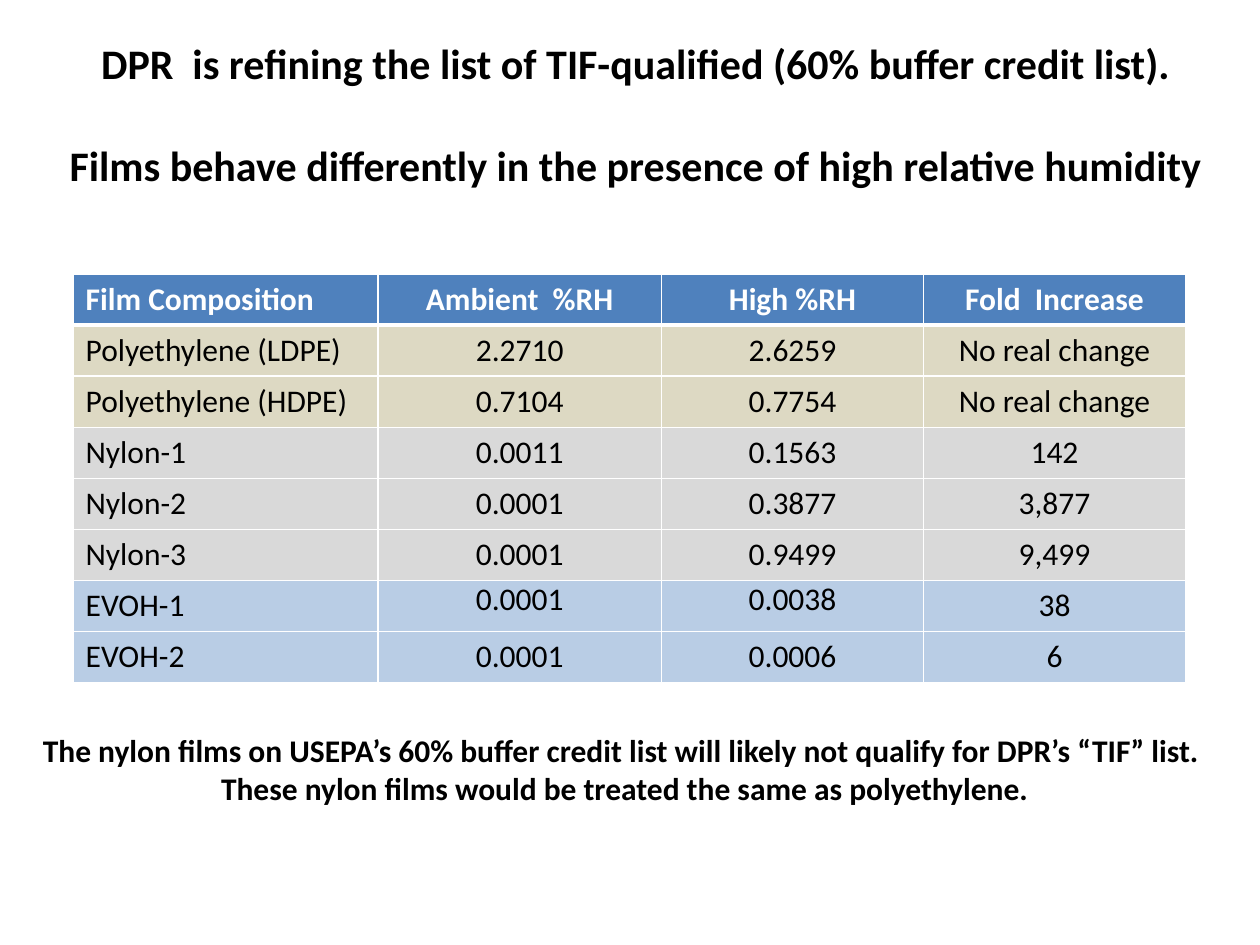
from typing import NamedTuple

from lxml import etree
from pptx import Presentation
from pptx import util as u
from pptx.dml.color import RGBColor
from pptx.enum import text
from pptx.oxml.ns import qn

WIDE, HIGH = u.Inches(10), u.Inches(7.5)
FONT = "Calibri"
BLACK = RGBColor(0, 0, 0)
WHITE = RGBColor(255, 255, 255)
BLUE = RGBColor(0x4F, 0x81, 0xBD)
TAN = RGBColor(0xDD, 0xD9, 0xC3)
GREY = RGBColor(0xD9, 0xD9, 0xD9)
PALE = RGBColor(0xB9, 0xCD, 0xE5)
LEFT, CENTER = text.PP_ALIGN.LEFT, text.PP_ALIGN.CENTER


class Box(NamedTuple):
    """Left, top, width and height as shares of the slide."""
    x: float
    y: float
    w: float
    h: float

    def emu(self) -> tuple:
        return (int(self.x * WIDE), int(self.y * HIGH),
                int(self.w * WIDE), int(self.h * HIGH))


class Film(NamedTuple):
    cells: tuple
    fill: RGBColor
    flush: tuple = ()  # columns whose cells have no top and bottom margin


TITLE = Box(0.042, 0.033, 0.925, 0.175)
GRID = Box(0.058, 0.29, 0.883, 0.432)
NOTE = Box(0.017, 0.767, 0.958, 0.094)
COLS = (2.42, 2.25, 2.08, 2.08)
HEADS = (
    "DPR  is refining the list of TIF-qualified (60% buffer credit list).",
    "Films behave differently in the presence of high relative humidity",
)
CLAIM = (
    "The nylon films on USEPA’s 60% buffer credit list will likely not "
    "qualify for DPR’s “TIF” list.  ",
    "These nylon films would be treated the same as polyethylene.",
)
ROWS = (
    Film(("Film Composition", "Ambient  %RH", "High %RH", "Fold  Increase"), BLUE),
    Film(("Polyethylene (LDPE)", "2.2710", "2.6259", "No real change"), TAN),
    Film(("Polyethylene (HDPE)", "0.7104", "0.7754", "No real change"), TAN),
    Film(("Nylon-1", "0.0011", "0.1563", "142"), GREY),
    Film(("Nylon-2", "0.0001", "0.3877", "3,877"), GREY),
    Film(("Nylon-3", "0.0001", "0.9499", "9,499"), GREY),
    Film(("EVOH-1", "0.0001", "0.0038", "38"), PALE, (1, 2)),
    Film(("EVOH-2", "0.0001", "0.0006", "6"), PALE),
)


def add_run(para, words: str, size: int, bold: bool = True,
            color: RGBColor = BLACK) -> None:
    run = para.add_run()
    run.text = words
    font = run.font
    font.name, font.size, font.bold = FONT, u.Pt(size), bold
    font.color.rgb = color


def rule(cell, edge: str, width: float) -> None:
    """Draw a white border on one edge (L, R, T or B) of a cell."""
    props = cell._tc.get_or_add_tcPr()
    line = etree.SubElement(props, qn(f"a:ln{edge}"), w=str(u.Pt(width)))
    fill = etree.SubElement(line, qn("a:solidFill"))
    etree.SubElement(fill, qn("a:srgbClr"), val=str(WHITE))


def add_title(slide) -> None:
    title = slide.shapes.title
    title.left, title.top, title.width, title.height = TITLE.emu()
    frame = title.text_frame
    frame.auto_size = text.MSO_AUTO_SIZE.NONE
    frame.vertical_anchor = text.MSO_ANCHOR.TOP
    for i, words in enumerate(HEADS):
        para = frame.add_paragraph() if i else frame.paragraphs[0]
        para.alignment = CENTER
        para.space_before = u.Pt(29.3 * i)
        add_run(para, words, 24)


def add_films(slide) -> None:
    table = slide.shapes.add_table(len(ROWS), len(COLS), *GRID.emu()).table
    for col, width in zip(table.columns, COLS):
        col.width = u.Inches(width)
    for r, film in enumerate(ROWS):
        head = r == 0
        for c, words in enumerate(film.cells):
            cell = table.cell(r, c)
            for edge in "LRTB":
                thick = (r, edge) in ((0, "B"), (1, "T"))
                rule(cell, edge, 3 if thick else 1)
            cell.fill.solid()
            cell.fill.fore_color.rgb = film.fill
            if c in film.flush:
                cell.margin_left = cell.margin_right = u.Inches(0.07)
                cell.margin_top = cell.margin_bottom = 0
            para = cell.text_frame.paragraphs[0]
            para.alignment = CENTER if c else LEFT
            add_run(para, words, 18, head, WHITE if head else BLACK)


def add_note(slide) -> None:
    frame = slide.shapes.add_textbox(*NOTE.emu()).text_frame
    frame.word_wrap = True
    para = frame.paragraphs[0]
    para.alignment = CENTER
    for words in CLAIM:
        add_run(para, words, 18)


def main() -> None:
    deck = Presentation()
    deck.slide_width, deck.slide_height = WIDE, HIGH
    slide = deck.slides.add_slide(deck.slide_layouts[5])
    add_title(slide)
    add_films(slide)
    add_note(slide)
    deck.save("out.pptx")


if __name__ == "__main__":
    main()
